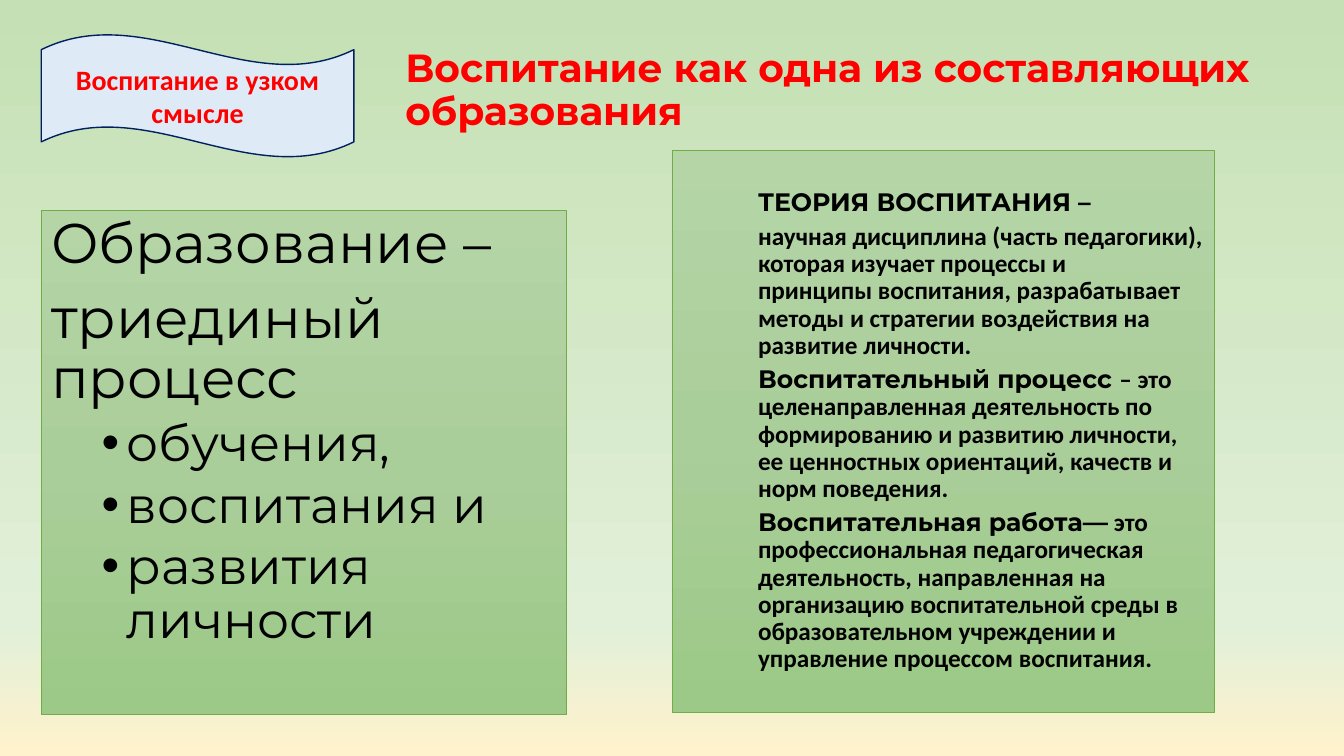
from lxml import etree
from pptx import Presentation
from pptx.dml.color import RGBColor
from pptx.enum import shapes, text
from pptx.oxml.ns import qn
from pptx.util import Inches, Pt

# Content
HEADING = "Воспитание как одна из составляющих образования"
BANNER = "Воспитание в узком смысле"
TRIAD = ["Образование –", "триединый процесс"]
TRIAD_PARTS = ["обучения,", "воспитания и", "развития личности"]
# Each paragraph is a list of (text, font) runs
THEORY = [
    [("ТЕОРИЯ ВОСПИТАНИЯ –\u00a0", "Montserrat")],
    [("научная дисциплина (часть педагогики), которая изучает процессы и "
      "принципы\u00a0воспитания, разрабатывает методы и стратегии воздействия "
      "на развитие личности.", "Calibri")],
    [("Воспитательный процесс ", "Montserrat"),
     ("– это целенаправленная деятельность по формированию и развитию личности, "
      "ее ценностных ориентаций, качеств и норм поведения.", "Calibri")],
    [("Воспитательная работа—", "Montserrat"),
     (" это профессиональная педагогическая деятельность, направленная на "
      "организацию воспитательной среды в образовательном учреждении и "
      "управление процессом воспитания.", "Calibri")],
]
COLORS = {"red": "FF0000", "black": "000000", "navy": "002060",
          "pale blue": "DEEBF7", "green": "70AD47"}
BACKGROUND_STOPS = [(0, "C5E0B4"), (83, "E2F0D9"), (100, "FFF2CC")]
PANEL_STOPS = [(0, "B5D5A7"), (50, "AACE9A"), (100, "9CC987")]


def rgb(name):
    return RGBColor.from_string(COLORS[name])


def fill_gradient(fill, stops):
    """Fill from top to bottom with any number of stops."""
    fill.gradient()
    fill.gradient_angle = 270
    stop_list = fill._fill._gradFill.find(qn("a:gsLst"))
    for old_stop in list(stop_list):
        stop_list.remove(old_stop)
    for percent, color in stops:
        stop = etree.SubElement(stop_list, qn("a:gs"), pos=str(percent * 1000))
        etree.SubElement(stop, qn("a:srgbClr"), val=color)


def add_run(paragraph, words, font, size, color, bold=False):
    run = paragraph.add_run()
    run.text = words
    run.font.name, run.font.size, run.font.bold = font, Pt(size), bold
    run.font.color.rgb = rgb(color)


def add_block(kind, box, line_color, line_width):
    block = slide.shapes.add_shape(kind, *map(Inches, box))
    block.shadow.inherit = False
    block.line.color.rgb = rgb(line_color)
    block.line.width = Pt(line_width)
    block.text_frame.word_wrap = True
    return block


def add_panel(box):
    panel = add_block(shapes.MSO_SHAPE.RECTANGLE, box, "green", 0.5)
    fill_gradient(panel.fill, PANEL_STOPS)
    panel.text_frame.vertical_anchor = text.MSO_ANCHOR.TOP
    return panel.text_frame


def add_paragraph(frame, space_before, indent=0, bullet=False):
    first = frame.paragraphs[0]
    paragraph = frame.add_paragraph() if first.runs else first
    paragraph.alignment = text.PP_ALIGN.LEFT
    paragraph.line_spacing = 0.9
    paragraph.space_before = Pt(space_before if first.runs else 0)
    props = paragraph._p.get_or_add_pPr()
    props.set("marL", str(Inches(indent)))
    if bullet:
        props.set("indent", str(Inches(-0.25)))
        etree.SubElement(props, qn("a:buFont"), typeface="Arial")
        etree.SubElement(props, qn("a:buChar"), char="•")
    return paragraph


# Slide and background
deck = Presentation()
deck.slide_width, deck.slide_height = Inches(13.33), Inches(7.5)
slide = deck.slides.add_slide(deck.slide_layouts[5])
fill_gradient(slide.background.fill, BACKGROUND_STOPS)

# Title
title = slide.shapes.title
title.left, title.top, title.width, title.height = map(
    Inches, (3.92, 0.43, 8.84, 0.95))
title.text_frame.word_wrap = True
title.text_frame.auto_size = text.MSO_AUTO_SIZE.NONE
title.text_frame.vertical_anchor = text.MSO_ANCHOR.MIDDLE
add_run(add_paragraph(title.text_frame, 0), HEADING, "Montserrat", 28, "red", True)

# Right panel: theory of upbringing
theory = add_panel((6.67, 1.49, 5.37, 5.58))
theory.margin_top = Inches(0.39)
for runs in THEORY:
    paragraph = add_paragraph(theory, 5, 0.75)
    for words, font in runs:
        add_run(paragraph, words, font, 18, "black", True)

# Left panel: education as a threefold process
triad = add_panel((0.41, 2.09, 5.21, 5))
for words in TRIAD:
    add_run(add_paragraph(triad, 10), words, "Montserrat", 40, "black")
for words in TRIAD_PARTS:
    add_run(add_paragraph(triad, 5, 0.75, True), words, "Montserrat", 36, "black")

# Wavy banner
banner = add_block(shapes.MSO_SHAPE.WAVE, (0.41, 0.34, 3.1, 1.22), "navy", 1)
banner.fill.solid()
banner.fill.fore_color.rgb = rgb("pale blue")
banner.text_frame.vertical_anchor = text.MSO_ANCHOR.MIDDLE
banner_line = banner.text_frame.paragraphs[0]
banner_line.alignment = text.PP_ALIGN.CENTER
add_run(banner_line, BANNER, "Calibri", 20, "red", True)

deck.save("out.pptx")
